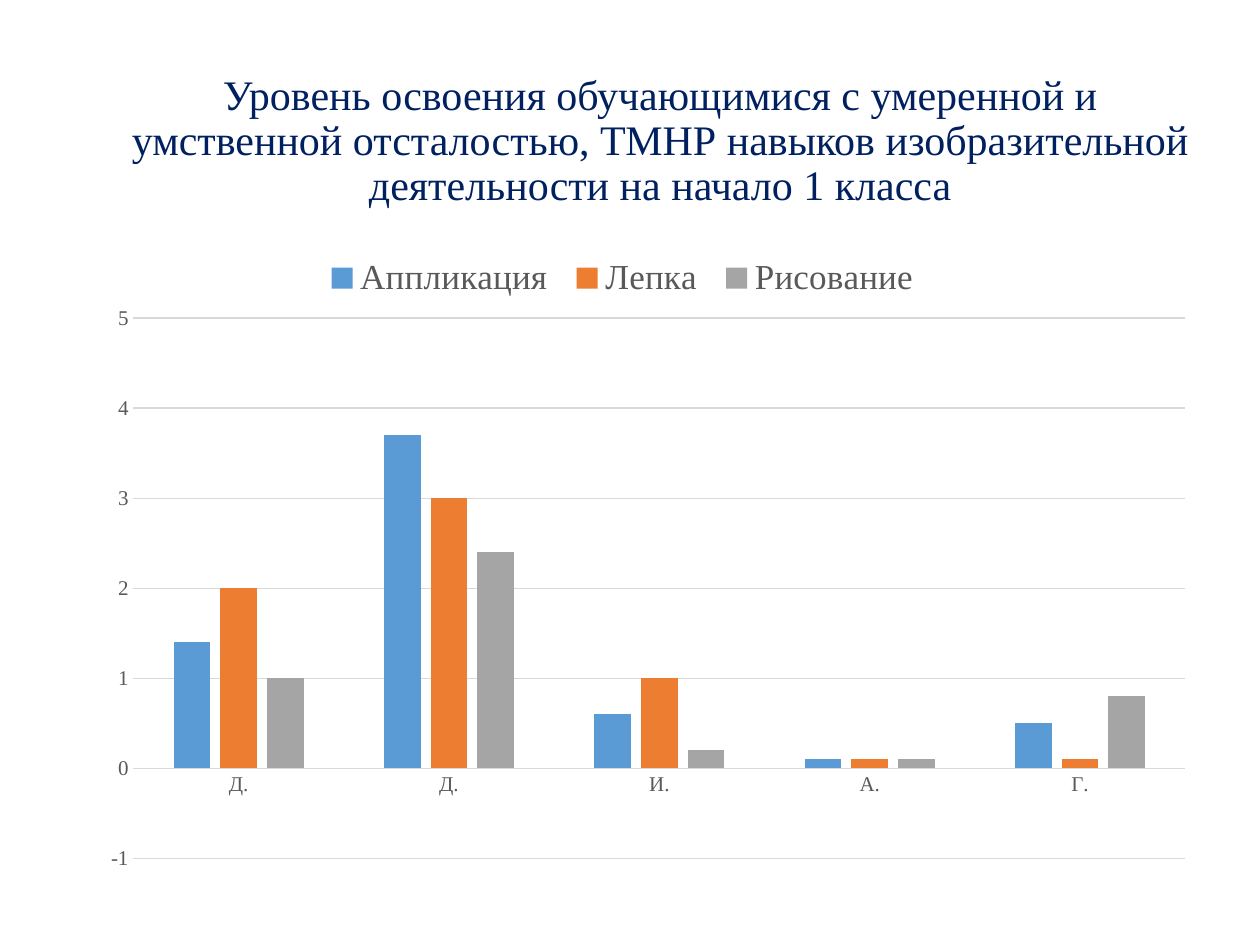
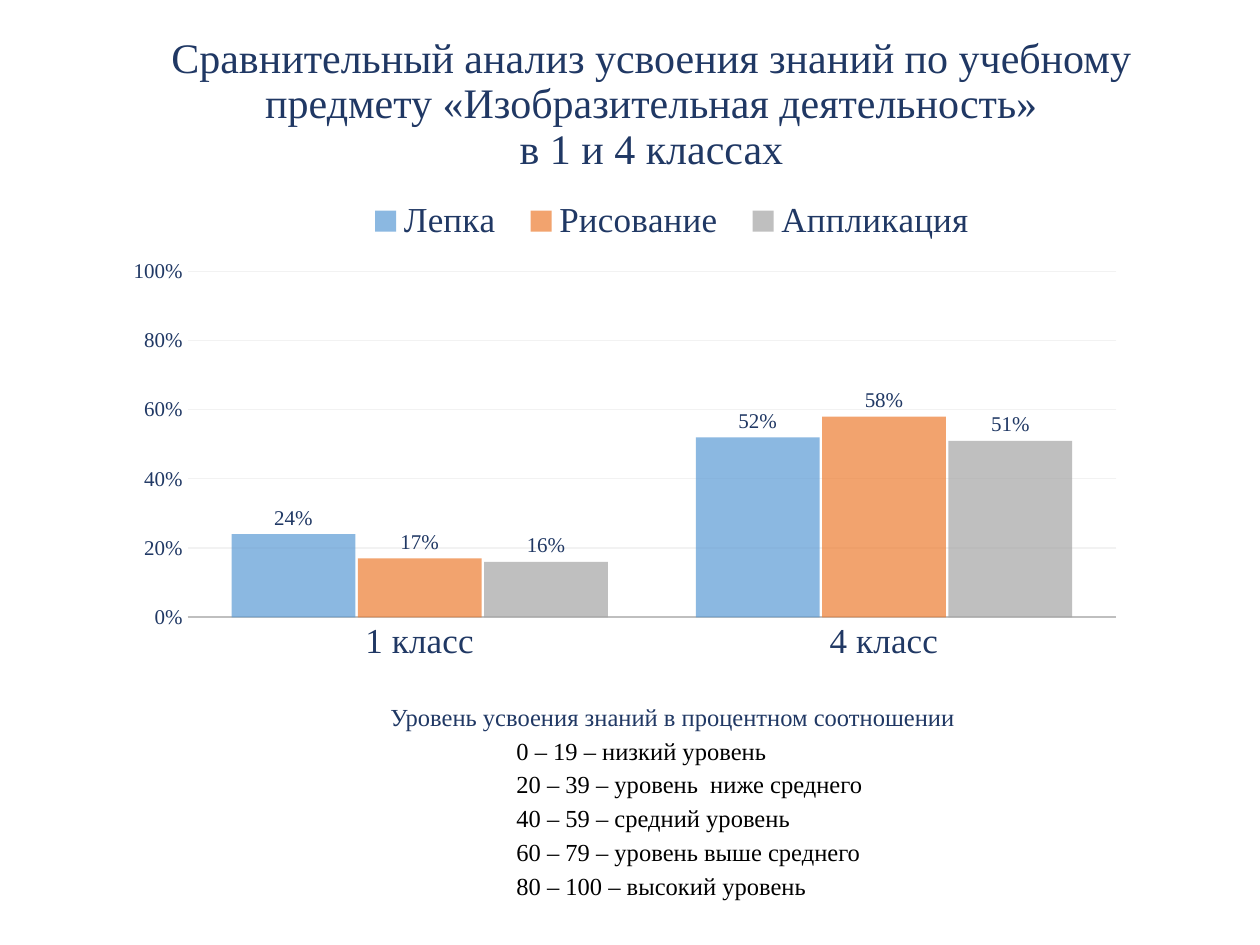
from pptx import Presentation
from pptx.chart.data import CategoryChartData
from pptx.dml.color import RGBColor
from pptx.enum.chart import XL_CHART_TYPE as ChartType
from pptx.enum.chart import XL_LABEL_POSITION as LabelPosition
from pptx.enum.chart import XL_LEGEND_POSITION as LegendPosition
from pptx.enum.chart import XL_TICK_MARK as TickMark
from pptx.enum.text import MSO_ANCHOR, MSO_AUTO_SIZE
from pptx.enum.text import PP_ALIGN as Align
from pptx.oxml import parse_xml
from pptx.oxml.ns import nsdecls, qn
from pptx.util import Inches, Pt

FONT = "Times New Roman"
TITLE_ONLY = 5
NAVY = RGBColor(0x00, 0x20, 0x60)
DARK_BLUE = RGBColor(0x20, 0x38, 0x64)
DARK_GRAY = RGBColor(0x59, 0x59, 0x59)
AXIS_GRAY = RGBColor(0xBF, 0xBF, 0xBF)
GRID_GRAY = RGBColor(0xD9, 0xD9, 0xD9)
PALE_GRAY = RGBColor(0xF2, 0xF2, 0xF2)
BLACK = RGBColor(0x00, 0x00, 0x00)
SERIES_COLORS = (
    RGBColor(0x5B, 0x9B, 0xD5),
    RGBColor(0xED, 0x7D, 0x31),
    RGBColor(0xA5, 0xA5, 0xA5),
)


def style_font(font, size, color):
    font.name = FONT
    font.size = Pt(size)
    font.color.rgb = color


def style_line(line, color, width):
    line.color.rgb = color
    line.width = Pt(width)


def place_part(part, index, box, inner=False):
    """Set the manual layout of a chart part, in fractions of the chart."""
    old_layout = part.find(qn("c:layout"))
    if old_layout is not None:
        part.remove(old_layout)
    target = '<c:layoutTarget val="inner"/>' if inner else ""
    modes = '<c:xMode val="edge"/><c:yMode val="edge"/>'
    sizes = "".join(f'<c:{key} val="{value}"/>' for key, value in zip("xywh", box))
    part.insert(index, parse_xml(
        f'<c:layout {nsdecls("c")}><c:manualLayout>{target}{modes}{sizes}'
        "</c:manualLayout></c:layout>"))


def set_opacity(series, percent):
    color = series.format.element.find(
        "/".join(qn(tag) for tag in ("c:spPr", "a:solidFill", "a:srgbClr")))
    color.append(parse_xml(f'<a:alpha {nsdecls("a")} val="{percent * 1000}"/>'))


def add_tab_stop(paragraph, position):
    # line_spacing is set beforehand, so the paragraph properties exist
    properties = paragraph.line_spacing and paragraph.runs[0].font and \
        paragraph._p.get_or_add_pPr()
    properties.append(parse_xml(
        f'<a:tabLst {nsdecls("a")}><a:tab pos="{position}" algn="l"/></a:tabLst>'))


class Deck:
    def __init__(self):
        self.presentation = Presentation()
        self.presentation.slide_width = Inches(10)
        self.presentation.slide_height = Inches(7.5)
        self.slide = None

    def add_slide(self, title, left, top, color):
        layout = self.presentation.slide_layouts[TITLE_ONLY]
        self.slide = self.presentation.slides.add_slide(layout)
        shape = self.slide.shapes.title
        shape.left, shape.top = Inches(left), Inches(top)
        shape.width, shape.height = Inches(8.62), Inches(1.45)
        text_frame = shape.text_frame
        text_frame.auto_size = MSO_AUTO_SIZE.NONE
        text_frame.vertical_anchor = MSO_ANCHOR.MIDDLE
        paragraph = text_frame.paragraphs[0]
        paragraph.text = title
        paragraph.alignment = Align.CENTER
        paragraph.line_spacing = 0.9
        for run in paragraph.runs:
            style_font(run.font, 24, color)

    def add_column_chart(self, box, categories, series_values, text_color,
                         number_format, gap, overlap, plot_box, legend_box):
        data = CategoryChartData(number_format=number_format)
        data.categories = categories
        for name, values in series_values.items():
            data.add_series(name, values)
        chart = self.slide.shapes.add_chart(
            ChartType.COLUMN_CLUSTERED, *map(Inches, box), data).chart
        style_font(chart.font, 10, text_color)
        chart.has_title = False

        chart.has_legend = True
        chart.legend.position = LegendPosition.BOTTOM
        chart.legend.include_in_layout = False
        style_font(chart.legend.font, 20, text_color)
        place_part(chart.element.find(".//" + qn("c:legend")), 1, legend_box)
        place_part(chart.element.find(".//" + qn("c:plotArea")), 0, plot_box, inner=True)

        plot = chart.plots[0]
        plot.gap_width = gap
        plot.overlap = overlap
        plot.vary_by_categories = False
        for series, color in zip(plot.series, SERIES_COLORS):
            series.invert_if_negative = False
            series.format.fill.solid()
            series.format.fill.fore_color.rgb = color
        return chart

    def style_axes(self, chart, color, category_size, axis_line, grid_color,
                   number_format, minimum, maximum, step):
        category_axis, value_axis = chart.category_axis, chart.value_axis
        for axis, size in ((category_axis, category_size), (value_axis, 12)):
            axis.major_tick_mark = axis.minor_tick_mark = TickMark.NONE
            style_font(axis.tick_labels.font, size, color)
        style_line(category_axis.format.line, *axis_line)
        value_axis.format.line.fill.background()
        value_axis.minimum_scale = minimum
        value_axis.maximum_scale = maximum
        value_axis.major_unit = step
        value_axis.has_major_gridlines = True
        style_line(value_axis.major_gridlines.format.line, grid_color, 0.75)
        value_axis.tick_labels.number_format = number_format
        value_axis.tick_labels.number_format_is_linked = False

    def add_value_labels(self, chart, color, number_format):
        for series in chart.plots[0].series:
            labels = series.data_labels
            labels.show_value = True
            labels.position = LabelPosition.OUTSIDE_END
            labels.number_format = number_format
            labels.number_format_is_linked = False
            style_font(labels.font, 12, color)

    def add_scale(self, box, heading, levels):
        shape = self.slide.shapes.add_textbox(*map(Inches, box))
        text_frame = shape.text_frame
        text_frame.word_wrap = True
        text_frame.auto_size = MSO_AUTO_SIZE.SHAPE_TO_FIT_TEXT
        paragraph = text_frame.paragraphs[0]
        paragraph.text = heading
        paragraph.alignment = Align.JUSTIFY
        style_font(paragraph.runs[0].font, 14, DARK_BLUE)
        for level in levels:
            paragraph = text_frame.add_paragraph()
            paragraph.text = f"\t{level}"
            paragraph.line_spacing = 1.15
            add_tab_stop(paragraph, Inches(1))
            style_font(paragraph.runs[0].font, 14, BLACK)


def add_starting_level(deck):
    deck.add_slide(
        "Уровень освоения обучающимися с умеренной и умственной отсталостью, "
        "ТМНР навыков изобразительной деятельности на начало 1 класса",
        0.93, 0.4, NAVY)
    chart = deck.add_column_chart(
        (0.65, 1.96, 8.9, 5.04),
        ["Д.", "Д.", "И.", "А.", "Г."],
        {
            "Аппликация": (1.4, 3.7, 0.6, 0.1, 0.5),
            "Лепка": (2, 3, 1, 0.1, 0.1),
            "Рисование": (1, 2.4, 0.2, 0.1, 0.8),
        },
        DARK_GRAY, "General", gap=219, overlap=-27,
        plot_box=(0.046, 0.112, 0.938, 0.851), legend_box=(0.207, 0.009, 0.55, 0.08))
    deck.style_axes(chart, DARK_GRAY, 12, (GRID_GRAY, 0.75), GRID_GRAY,
                    "General", minimum=-1, maximum=5, step=1)


def add_comparison(deck):
    deck.add_slide(
        "Сравнительный анализ усвоения знаний по учебному предмету "
        "«Изобразительная деятельность»\nв 1 и 4 классах",
        0.86, 0.11, DARK_BLUE)
    chart = deck.add_column_chart(
        (0.86, 1.56, 8.62, 5.44),
        ["1 класс", "4 класс"],
        {
            "Лепка": (0.24, 0.52),
            "Рисование": (0.17, 0.58),
            "Аппликация": (0.16, 0.51),
        },
        DARK_BLUE, "0%", gap=71, overlap=-2,
        plot_box=(0.073, 0.109, 0.855, 0.505), legend_box=(0.224, 0.001, 0.59, 0.07))
    deck.style_axes(chart, DARK_BLUE, 20, (AXIS_GRAY, 1.25), PALE_GRAY,
                    "0%", minimum=None, maximum=1, step=0.2)
    for series in chart.plots[0].series:
        set_opacity(series, 70)
    deck.add_value_labels(chart, DARK_BLUE, "0%")
    deck.add_scale(
        (3, 5.52, 4.69, 1.69),
        "Уровень усвоения знаний в процентном соотношении",
        (
            "0 – 19 – низкий уровень",
            "20 – 39 – уровень  ниже среднего",
            "40 – 59 – средний уровень",
            "60 – 79 – уровень выше среднего",
            "80 – 100 – высокий уровень",
        ))


def main():
    deck = Deck()
    add_starting_level(deck)
    add_comparison(deck)
    deck.presentation.save("out.pptx")


if __name__ == "__main__":
    main()
